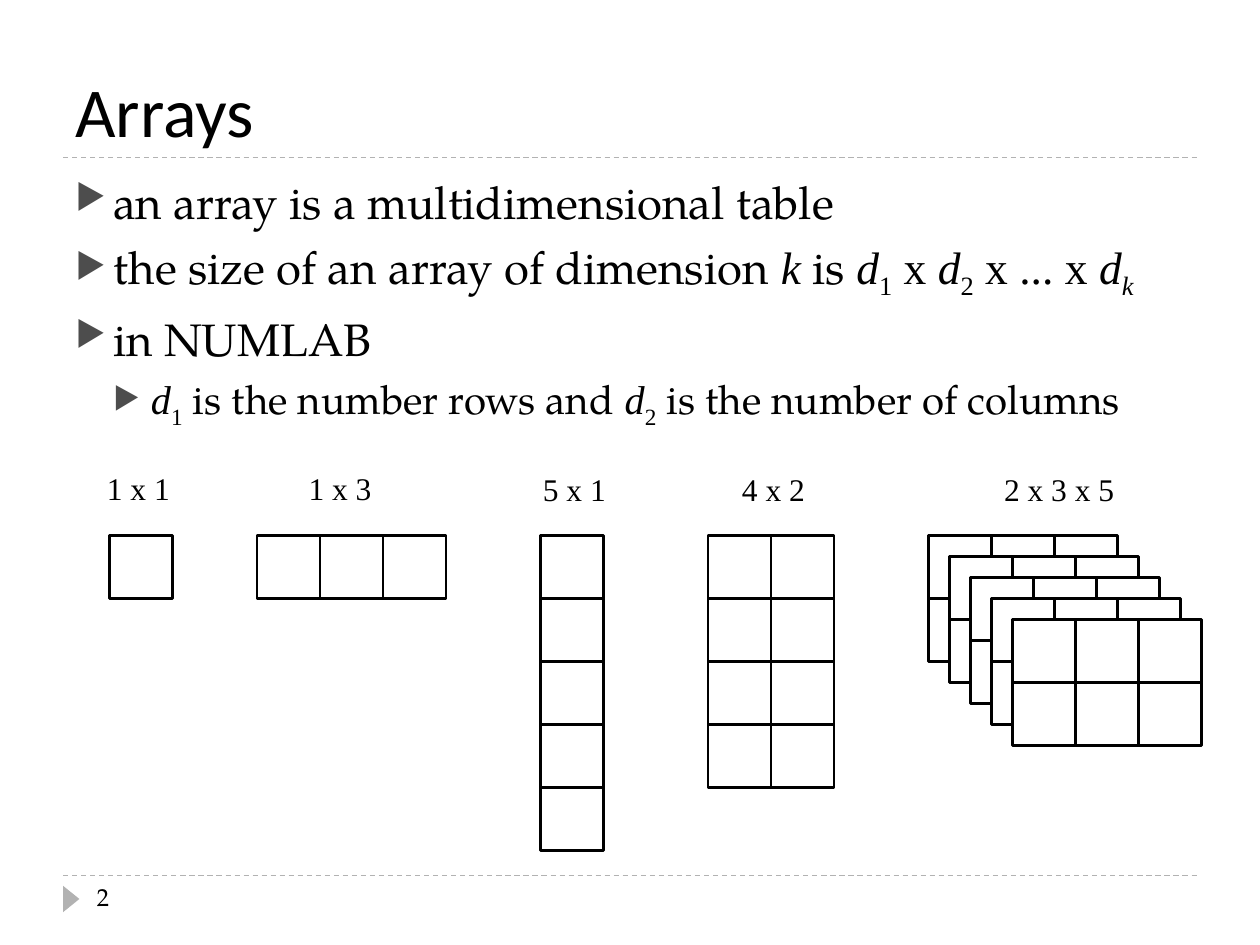
from dataclasses import dataclass

from lxml import etree
from pptx import Presentation
from pptx.dml.color import RGBColor
from pptx.enum import dml, shapes, text
from pptx.oxml import ns
from pptx.util import Inches, Pt

BLACK = RGBColor(0x00, 0x00, 0x00)
WHITE = RGBColor(0xFF, 0xFF, 0xFF)
RULE_GRAY = RGBColor(0xB2, 0xB2, 0xB2)
BULLET_GRAY = RGBColor(0x4D, 0x4D, 0x4D)
SANS, SERIF, MATH = "Calibri", "TeX Gyre Pagella", "Times New Roman"
CELL = 0.5
GRID_TOP = 4.25
LAYER_STEP = 1 / 6


@dataclass(frozen=True)
class Piece:
    text: str
    font: str = SERIF
    italic: bool = False
    subscript: bool = False


@dataclass(frozen=True)
class Bullet:
    pieces: tuple[Piece, ...]
    size: int = 26
    level: int = 0
    space_before: int = 6


@dataclass(frozen=True)
class Label:
    text: str
    left: float
    top: float
    width: float = 0.71


@dataclass(frozen=True)
class Grid:
    left: float
    row_lengths: tuple[int, ...]
    layer: int = 0


def variable(name: str) -> Piece:
    return Piece(name, MATH, italic=True)


def index(name: str, italic: bool = False) -> Piece:
    return Piece(name, MATH, italic, subscript=True)


BULLETS = (
    Bullet((Piece("an array is a multidimensional table"),)),
    Bullet((
        Piece("the size of an array of dimension "), variable("k"), Piece(" is "),
        variable("d"), index("1"), Piece(" x ", MATH),
        variable("d"), index("2"), Piece(" x ... x ", MATH),
        variable("d"), index("k", italic=True),
    )),
    Bullet((Piece("in NUMLAB"),)),
    Bullet((
        variable("d"), index("1"), Piece(" is the number rows and "),
        variable("d"), index("2"), Piece(" is the number of columns"),
    ), size=23, level=1, space_before=5),
)
LABELS = (
    Label("1 x 1", 0.75, 3.67),
    Label("1 x 3", 2.35, 3.67),
    Label("5 x 1", 4.21, 3.68),
    Label("4 x 2", 5.79, 3.68),
    Label("2 x 3 x 5", 7.87, 3.68, 1.09),
)
FLAT_GRIDS = (
    Grid(0.87, (1,)),
    Grid(2.04, (3,)),
    Grid(4.29, (1,) * 5),
    Grid(5.62, (2,) * 4),
)
# The two rear layers need only the cells that stay in view
STACK = tuple(
    Grid(7.37, (3, 1) if layer < 2 else (3, 3), layer) for layer in range(5)
)


def add_frame(slide, left: float, top: float, width: float, height: float,
              wrap: bool = True):
    box = slide.shapes.add_textbox(
        Inches(left), Inches(top), Inches(width), Inches(height))
    box.text_frame.word_wrap = wrap
    return box.text_frame


def add_piece(paragraph, piece: Piece, size: int) -> None:
    run = paragraph.add_run()
    run.text = piece.text
    run.font.name = piece.font
    run.font.size = Pt(size)
    run.font.italic = piece.italic
    run.font.color.rgb = BLACK
    if piece.subscript:
        run.font._element.set("baseline", "-25000")


def add_bullet(paragraph, bullet: Bullet) -> None:
    paragraph.level = bullet.level
    paragraph.space_before = Pt(bullet.space_before)
    props = paragraph._p.get_or_add_pPr()
    props.set("marL", str(Inches(0.3 * (bullet.level + 1))))
    props.set("indent", str(Inches(-0.3)))
    color = etree.SubElement(props, ns.qn("a:buClr"))
    etree.SubElement(color, ns.qn("a:srgbClr"), val=str(BULLET_GRAY))
    etree.SubElement(props, ns.qn("a:buSzPct"), val="76000")
    etree.SubElement(props, ns.qn("a:buChar"), char="▶")
    for piece in bullet.pieces:
        add_piece(paragraph, piece, bullet.size)


def add_rule(slide, y: float) -> None:
    rule = slide.shapes.add_connector(
        shapes.MSO_CONNECTOR.STRAIGHT, Inches(0.5), Inches(y), Inches(9.5), Inches(y))
    rule.line.color.rgb = RULE_GRAY
    rule.line.width = Pt(0.75)
    rule.line.dash_style = dml.MSO_LINE.DASH
    etree.SubElement(rule._element.spPr, ns.qn("a:effectLst"))


def add_page_marker(slide) -> None:
    marker = slide.shapes.add_shape(
        shapes.MSO_SHAPE.ISOSCELES_TRIANGLE,
        Inches(0.46), Inches(7.07), Inches(0.21), Inches(0.13))
    marker.rotation = 90
    marker.shadow.inherit = False
    marker.fill.solid()
    marker.fill.fore_color.rgb = RULE_GRAY
    marker.line.fill.background()


def add_grid(slide, grid: Grid) -> None:
    shift = grid.layer * LAYER_STEP
    for row, length in enumerate(grid.row_lengths):
        for column in range(length):
            cell = slide.shapes.add_shape(
                shapes.MSO_SHAPE.RECTANGLE,
                Inches(grid.left + shift + column * CELL),
                Inches(GRID_TOP + shift + row * CELL),
                Inches(CELL), Inches(CELL))
            cell.shadow.inherit = False
            cell.fill.solid()
            cell.fill.fore_color.rgb = WHITE
            cell.line.color.rgb = BLACK
            cell.line.width = Pt(1.5)


def main() -> None:
    deck = Presentation()
    deck.slide_width, deck.slide_height = Inches(10), Inches(7.5)
    slide = deck.slides.add_slide(deck.slide_layouts[6])

    # Rules and page marker
    for y in (6.95, 1.25):
        add_rule(slide, y)
    add_page_marker(slide)

    # Title
    title = add_frame(slide, 0.5, 0.17, 9, 1.08)
    title.vertical_anchor = text.MSO_ANCHOR.BOTTOM
    add_piece(title.paragraphs[0], Piece("Arrays", SANS), 40)

    # Bullets
    body = add_frame(slide, 0.5, 1.33, 9, 5.4)
    for number, bullet in enumerate(BULLETS):
        add_bullet(body.add_paragraph() if number else body.paragraphs[0], bullet)

    # Page number
    page = add_frame(slide, 0.67, 6.95, 2.17, 0.4)
    add_piece(page.paragraphs[0], Piece("2"), 14)

    # Example arrays with their sizes
    for grid in FLAT_GRIDS + STACK:
        add_grid(slide, grid)
    for label in LABELS:
        frame = add_frame(slide, label.left, label.top, label.width, 0.4, wrap=False)
        frame.auto_size = text.MSO_AUTO_SIZE.SHAPE_TO_FIT_TEXT
        add_piece(frame.paragraphs[0], Piece(label.text, MATH), 18)

    deck.save("out.pptx")


if __name__ == "__main__":
    main()
